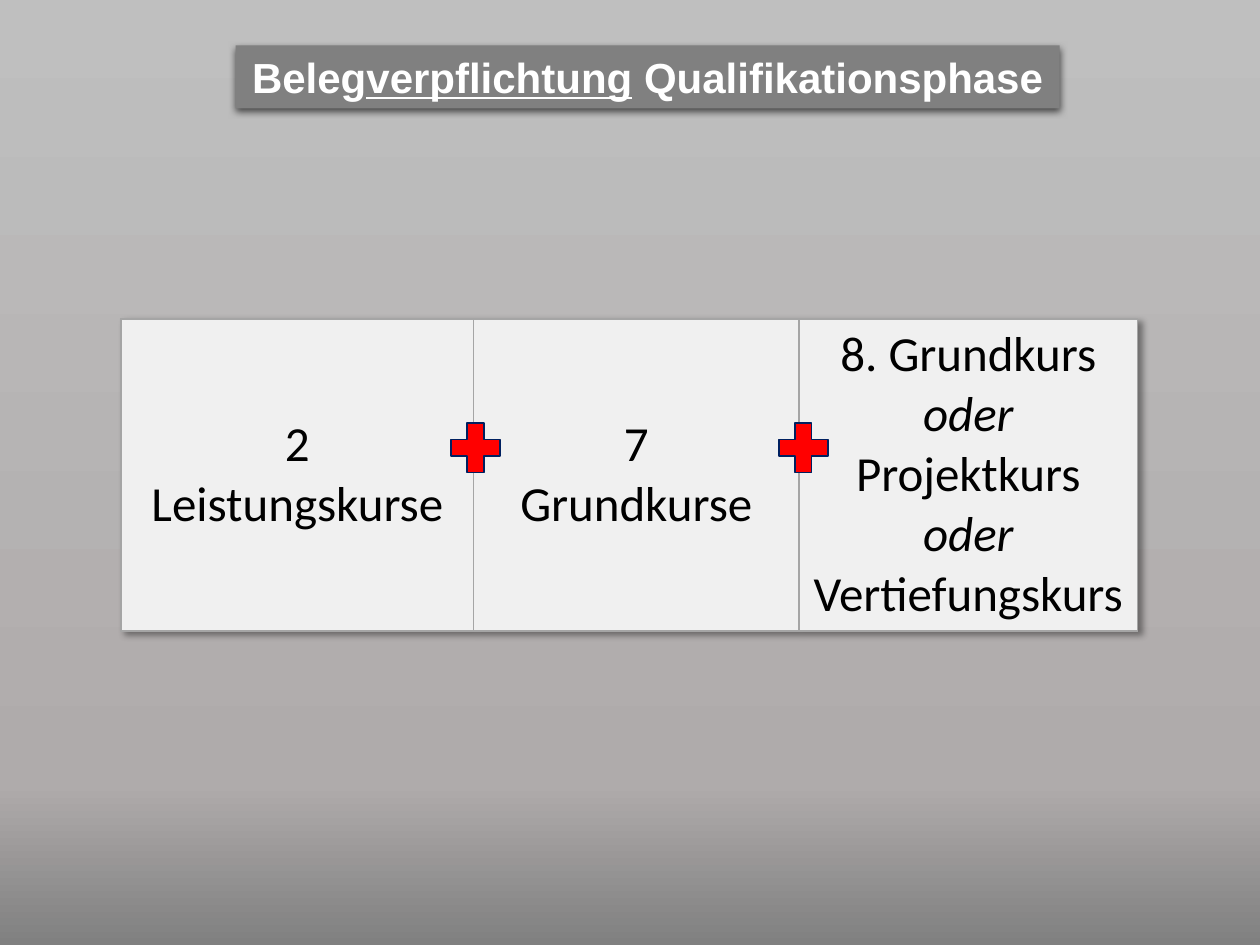
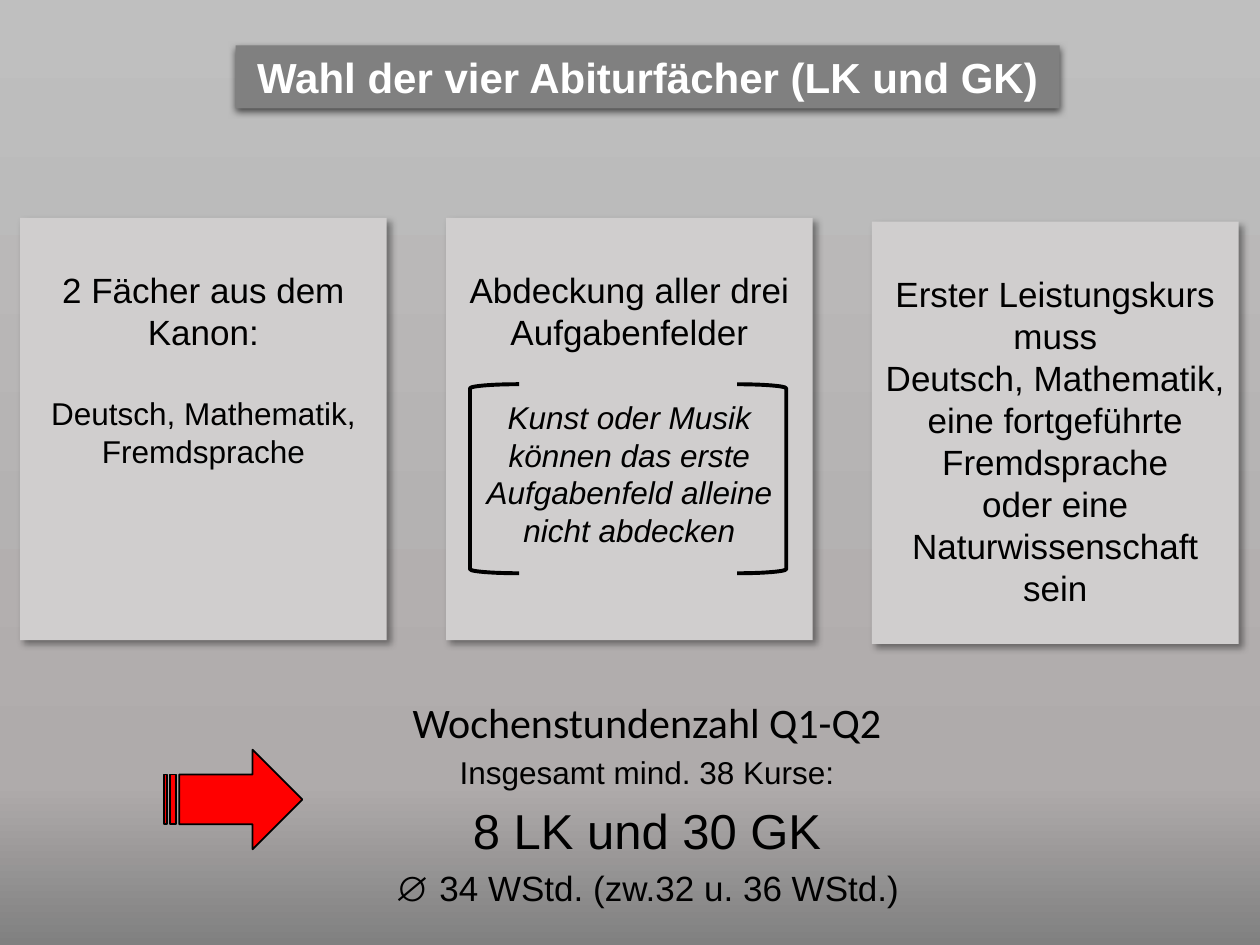
from copy import deepcopy

from lxml.etree import SubElement
from pptx import Presentation
from pptx.dml.color import RGBColor
from pptx.enum.shapes import MSO_SHAPE
from pptx.enum.text import MSO_ANCHOR, MSO_AUTO_SIZE, PP_ALIGN
from pptx.oxml.ns import qn
from pptx.util import Inches, Pt

BLACK, WHITE, RED, NAVY = "000000", "FFFFFF", "FF0000", "002060"
BAND_GREY, CARD_GREY, CELL_GREY, BORDER_GREY = "808080", "D0CECE", "F0F0F0", "A5A5A5"
BACKGROUND_STOPS = [(0, "BFBFBF"), (0.83, "AFABAB"), (1, "808080")]
TITLE_SHADOW = dict(opacity=63, blur=4.5, distance=1.5, angle=90)
CARD_SHADOW = dict(opacity=40, blur=4, distance=3, angle=45)
CARD_WIDTH, CARD_HEIGHT = 2.91, 3.35


def color(hex_string):
    return RGBColor.from_string(hex_string)


def add_text(paragraph, text, size=20, font="Arial", text_color=BLACK,
             bold=False, italic=False, underline=False, space_before=0):
    """Add centred text to the paragraph; a newline becomes a line break."""
    paragraph.alignment = PP_ALIGN.CENTER
    if space_before:
        paragraph.space_before = Pt(space_before)
    for index, line in enumerate(text.split("\n")):
        if index:
            paragraph.add_line_break()
        run = paragraph.add_run()
        run.text = line
        run.font.size = Pt(size)
        run.font.name = font
        run.font.color.rgb = color(text_color)
        run.font.bold, run.font.italic, run.font.underline = bold, italic, underline


def add_paragraphs(text_frame, paragraphs):
    for index, (text, text_format) in enumerate(paragraphs):
        paragraph = text_frame.add_paragraph() if index else text_frame.paragraphs[0]
        add_text(paragraph, text, **text_format)


def add_solid_fill(parent, hex_string):
    fill = SubElement(parent, qn("a:solidFill"))
    return SubElement(fill, qn("a:srgbClr"), val=hex_string)


def add_outer_shadow(effect_list, opacity, blur, distance, angle):
    shadow = SubElement(effect_list, qn("a:outerShdw"), blurRad=str(Pt(blur)),
                        dist=str(Pt(distance)), dir=str(angle * 60000),
                        algn="t", rotWithShape="0")
    shadow_color = SubElement(shadow, qn("a:srgbClr"), val=BLACK)
    SubElement(shadow_color, qn("a:alpha"), val=str(opacity * 1000))


def format_shape(shape, fill=None, line=None, line_width=1, shadow=None):
    if fill:
        shape.fill.solid()
        shape.fill.fore_color.rgb = color(fill)
    else:
        shape.fill.background()
    if line:
        shape.line.color.rgb = color(line)
        shape.line.width = Pt(line_width)
    else:
        shape.line.fill.background()
    shape.shadow.inherit = False
    if shadow:
        add_outer_shadow(shape._element.spPr.find(qn("a:effectLst")), **shadow)


def add_shape(slide, kind, left, top, width, height, **shape_format):
    shape = slide.shapes.add_shape(kind, Inches(left), Inches(top),
                                   Inches(width), Inches(height))
    format_shape(shape, **shape_format)
    return shape


def set_background(master):
    fill = master.background.fill
    fill.gradient()
    fill.gradient_angle = 270
    stop_list = master.element.find(".//" + qn("a:gsLst"))
    stop_list.insert(1, deepcopy(stop_list[0]))
    for stop, (position, hex_string) in zip(fill.gradient_stops, BACKGROUND_STOPS):
        stop.position = position
        stop.color.rgb = color(hex_string)


def add_titled_slide(presentation, title_parts):
    slide = presentation.slides.add_slide(presentation.slide_layouts[5])
    title = slide.shapes.title
    title.left, title.top = Inches(1.87), Inches(0.36)
    title.width, title.height = Inches(6.54), Inches(0.5)
    format_shape(title, fill=BAND_GREY, shadow=TITLE_SHADOW)
    text_frame = title.text_frame
    text_frame.auto_size = MSO_AUTO_SIZE.NONE
    text_frame.word_wrap = False
    for text, underline in title_parts:
        add_text(text_frame.paragraphs[0], text, size=24, text_color=WHITE,
                 bold=True, underline=underline)
    return slide


def format_cell(cell):
    cell.fill.solid()
    cell.fill.fore_color.rgb = color(CELL_GREY)
    cell.vertical_anchor = MSO_ANCHOR.MIDDLE
    properties = cell._tc.get_or_add_tcPr()
    for index, side in enumerate(("lnL", "lnR", "lnT", "lnB")):
        border = properties.makeelement(qn("a:" + side), {"w": str(Pt(1))})
        add_solid_fill(border, BORDER_GREY)
        properties.insert(index, border)


def add_course_table(slide):
    widths = (2.8, 2.58, 2.69)
    frame = slide.shapes.add_table(1, len(widths), Inches(0.96), Inches(2.53),
                                   Inches(sum(widths)), Inches(2.43))
    table = frame.table
    table.first_row = table.horz_banding = False
    properties = table._tbl.tblPr
    effect_list = properties.makeelement(qn("a:effectLst"), {})
    properties.insert(0, effect_list)
    add_outer_shadow(effect_list, **CARD_SHADOW)
    for column, width in zip(table.columns, widths):
        column.width = Inches(width)

    course_font = dict(size=28, font="Calibri")
    cells = [table.cell(0, index) for index in range(len(widths))]
    for cell in cells:
        format_cell(cell)
    for cell, words in zip(cells, (("2", "Leistungskurse"), ("7", "Grundkurse"))):
        add_paragraphs(cell.text_frame, [(word, course_font) for word in words])
    for text in ("8. Grundkurs ", "oder", " Projektkurs ", "oder", " Vertiefungskurs"):
        add_text(cells[2].text_frame.paragraphs[0], text,
                 italic=text == "oder", **course_font)


def add_card(slide, left, top, paragraphs):
    card = add_shape(slide, MSO_SHAPE.RECTANGLE, left, top, CARD_WIDTH, CARD_HEIGHT,
                     fill=CARD_GREY, shadow=CARD_SHADOW)
    text_frame = card.text_frame
    text_frame.word_wrap = True
    text_frame.vertical_anchor = MSO_ANCHOR.TOP
    text_frame.margin_top = Inches(0.4)
    add_paragraphs(text_frame, paragraphs)


def build_course_slide(presentation):
    slide = add_titled_slide(presentation, [
        ("Beleg", False), ("verpflichtung", True), (" Qualifikationsphase", False)])
    add_course_table(slide)
    for left in (3.58, 6.18):
        plus = add_shape(slide, MSO_SHAPE.CROSS, left, 3.36, 0.39, 0.39,
                         fill=RED, line=NAVY)
        plus.adjustments[0] = 0.33


def build_exam_slide(presentation):
    slide = add_titled_slide(presentation,
                             [("Wahl der vier Abiturfächer (LK und GK)", False)])
    add_card(slide, 0.16, 1.73, [
        ("2 Fächer aus dem Kanon:", {}),
        ("Deutsch, Mathematik, Fremdsprache", dict(size=18, space_before=24))])
    add_card(slide, 3.54, 1.73, [
        ("Abdeckung aller drei Aufgabenfelder", {}),
        ("Kunst oder Musik\nkönnen das erste Aufgabenfeld alleine nicht abdecken",
         dict(size=18, italic=True, space_before=26))])
    add_card(slide, 6.92, 1.76, [
        ("Erster Leistungskurs muss", {}),
        ("Deutsch, Mathematik, eine fortgeführte Fremdsprache", {}),
        ("oder eine Naturwissenschaft sein", {})])
    for kind, left in ((MSO_SHAPE.LEFT_BRACKET, 3.73), (MSO_SHAPE.RIGHT_BRACKET, 5.85)):
        add_shape(slide, kind, left, 3.05, 0.39, 1.5, line=BLACK, line_width=2.25)

    hours = slide.shapes.add_textbox(Inches(2.28), Inches(5.48),
                                     Inches(5.71), Inches(1.84))
    hours.text_frame.word_wrap = True
    add_paragraphs(hours.text_frame, [
        ("Wochenstundenzahl Q1-Q2", dict(size=24, font="Calibri")),
        ("Insgesamt mind. 38 Kurse:", dict(size=18, space_before=3.6)),
        ("8 LK und 30 GK", dict(size=28, space_before=5.6)),
        ("∅ 34 WStd. (zw.32 u. 36 WStd.)", dict(size=20, space_before=4))])
    add_shape(slide, MSO_SHAPE.STRIPED_RIGHT_ARROW, 1.3, 5.95, 1.1, 0.79,
              fill=RED, line=BLACK)


def main():
    presentation = Presentation()
    presentation.slide_width, presentation.slide_height = Inches(10), Inches(7.5)
    set_background(presentation.slide_master)
    build_course_slide(presentation)
    build_exam_slide(presentation)
    presentation.save("out.pptx")


if __name__ == "__main__":
    main()
